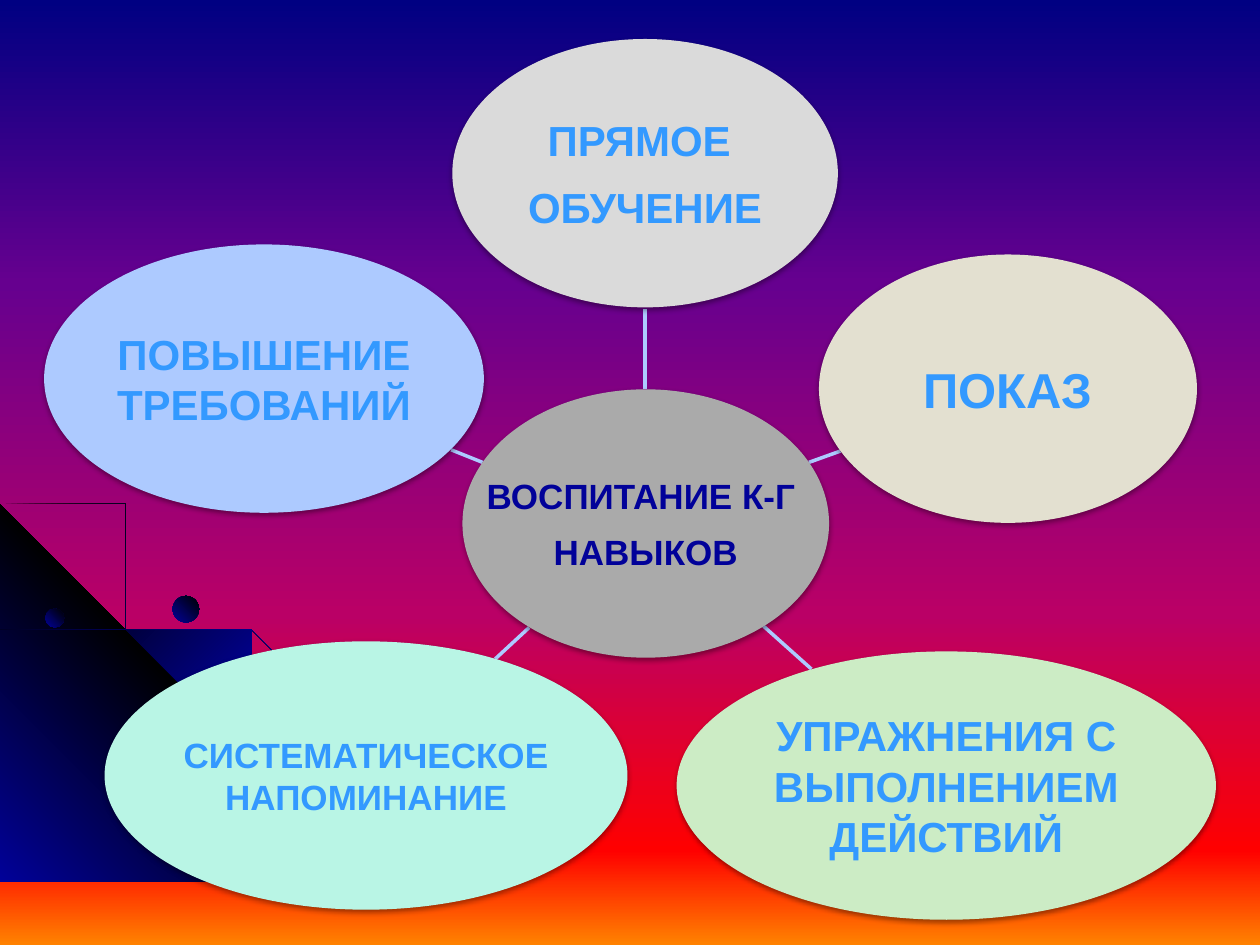
"""Build a radial diagram of teaching methods on a sunset gradient with a swirl ornament."""
from dataclasses import dataclass

from lxml import etree
from pptx import Presentation
from pptx import util as u
from pptx.dml import color
from pptx.enum import shapes, text
from pptx.oxml import ns

COLOURS = {
    "hub": "AAAAAA", "direct": "DADADA", "show": "E3E0D0", "exercise": "CCECC5",
    "remind": "B9F5E5", "demand": "ADCAFF", "spoke": "ADCAFF",
    "label": "3399FF", "title": "010199", "navy": "010199", "black": "000000",
}
SKY = [(0, "000082"), (30, "66008F"), (65, "BA0066"), (90, "FF0000"), (100, "FF8200")]
DARK_EDGES = [(0, COLOURS["black"]), (50, COLOURS["navy"]), (100, COLOURS["black"])]
DARK_MIDDLE = [(0, COLOURS["navy"]), (50, COLOURS["black"]), (100, COLOURS["navy"])]
BEAD = [(0, COLOURS["navy"]), (100, COLOURS["black"])]
BUBBLE_HEIGHT = 2.13


@dataclass
class Bubble:
    """An ellipse with its label."""
    left: float
    top: float
    width: float
    fill: str
    lines: tuple
    size: int
    ink: str = "label"
    wrap: bool = True


@dataclass
class Spoke:
    """A straight line between the hub and a bubble."""
    start: tuple
    end: tuple


@dataclass
class Outline:
    """A closed polygon with a gradient fill."""
    points: list
    stops: list
    angle: int


@dataclass
class Dot:
    """A small round bead on the ornament."""
    left: float
    top: float
    size: float
    angle: int


OUTLINES = [
    Outline([(0.57, 4.47), (0.28, 4.41), (0, 4.35), (0, 4.38), (0.28, 4.43), (0.56, 4.49),
             (0.97, 4.61), (1.35, 4.78), (1.73, 4.99), (2.08, 5.23), (2.41, 5.49), (2.71, 5.79),
             (2.98, 6.12), (3.23, 6.49), (3.37, 6.73), (3.5, 6.98), (3.6, 7.23), (3.7, 7.49),
             (3.72, 7.49), (3.62, 7.23), (3.52, 6.98), (3.39, 6.73), (3.25, 6.48), (3, 6.11),
             (2.72, 5.78), (2.42, 5.48), (2.09, 5.21), (1.74, 4.97), (1.36, 4.77), (0.98, 4.59)],
            DARK_EDGES, 45),
    Outline([(3.22, 7.49), (0, 7.49), (0, 4.27)], DARK_MIDDLE, 315),
    Outline([(2.85, 7.14), (2.94, 7.32), (3.01, 7.49), (3.03, 7.49), (2.96, 7.3), (2.86, 7.12),
             (2.66, 6.76), (2.42, 6.4), (2.15, 6.06), (1.84, 5.76), (1.52, 5.49), (1.17, 5.26),
             (0.79, 5.05), (0.41, 4.88), (0, 4.75), (0, 4.77), (0.39, 4.9), (0.77, 5.07),
             (1.15, 5.28), (1.5, 5.51), (1.83, 5.78), (2.13, 6.08), (2.4, 6.41), (2.65, 6.77)],
            DARK_EDGES, 45),
    Outline([(0, 4.42), (0, 4.44), (0.36, 4.57), (0.74, 4.75), (1.09, 4.94), (1.42, 5.18),
             (1.73, 5.44), (2.02, 5.75), (2.27, 6.05), (2.52, 6.41), (2.67, 6.67), (2.8, 6.94),
             (2.92, 7.22), (3.01, 7.49), (3.03, 7.49), (2.94, 7.2), (2.82, 6.93), (2.69, 6.65),
             (2.54, 6.39), (2.29, 6.03), (2.04, 5.73), (1.75, 5.43), (1.44, 5.16), (1.11, 4.93),
             (0.76, 4.73), (0.39, 4.55)], DARK_EDGES, 45),
]
DOTS = [Dot(0.36, 4.83, 0.15, 315), Dot(2.67, 6.74, 0.16, 45), Dot(1.37, 4.73, 0.21, 315)]
BUBBLES = [
    Bubble(3.67, 3.09, 2.91, "hub", ("ВОСПИТАНИЕ К-Г ", "НАВЫКОВ"), 20, "title", False),
    Bubble(3.59, 0.31, 3.06, "direct", ("ПРЯМОЕ ", "ОБУЧЕНИЕ"), 24),
    Bubble(6.5, 2.02, 3, "show", ("ПОКАЗ",), 28),
    Bubble(5.37, 5.17, 4.28, "exercise", ("УПРАЖНЕНИЯ С ВЫПОЛНЕНИЕМ ДЕЙСТВИЙ",), 24),
    Bubble(0.83, 5.09, 4.15, "remind", ("СИСТЕМАТИЧЕСКОЕ НАПОМИНАНИЕ",), 20),
    Bubble(0.35, 1.94, 3.49, "demand", ("ПОВЫШЕНИЕ ТРЕБОВАНИЙ",), 24),
]
SPOKES = [
    Spoke((5.12, 3.09), (5.12, 2.45)), Spoke((6.42, 3.67), (6.67, 3.58)),
    Spoke((6.06, 4.97), (6.44, 5.31)), Spoke((4.2, 4.98), (3.93, 5.23)),
    Spoke((3.83, 3.67), (3.58, 3.57)),
]


def rgb(name: str) -> color.RGBColor:
    """Look up a named colour."""
    return color.RGBColor.from_string(COLOURS[name])


def apply(target, values: dict) -> None:
    """Set each named attribute on the target."""
    for name, value in values.items():
        setattr(target, name, value)


def add_colour(parent, value: str):
    """Append an sRGB colour element."""
    return etree.SubElement(parent, ns.qn("a:srgbClr"), val=value)


def set_gradient(fill, element, stops: list, angle: int) -> None:
    """Give a fill linear gradient stops and a clockwise angle."""
    fill.gradient()
    gradient = element.find(".//" + ns.qn("a:gradFill"))
    stop_list = gradient.find(ns.qn("a:gsLst"))
    for stop in list(stop_list):
        stop_list.remove(stop)
    for position, value in stops:
        add_colour(etree.SubElement(stop_list, ns.qn("a:gs"), pos=str(position * 1000)), value)
    gradient.find(ns.qn("a:lin")).set("ang", str(angle * 60000))


def finish_ornament(shape, stops: list, angle: int) -> None:
    """Paint an ornament part without line or shadow."""
    set_gradient(shape.fill, shape.element, stops, angle)
    shape.line.fill.background()
    shape.shadow.inherit = False


def draw_outline(page, outline: Outline) -> None:
    """Draw a closed gradient polygon."""
    builder = page.shapes.build_freeform(*outline.points[0], scale=float(u.Inches(1)))
    builder.add_line_segments(outline.points[1:], close=True)
    finish_ornament(builder.convert_to_shape(), outline.stops, outline.angle)


def draw_dot(page, dot: Dot) -> None:
    """Draw a bead."""
    frame = map(u.Inches, (dot.left, dot.top, dot.size, dot.size))
    finish_ornament(page.shapes.add_shape(shapes.MSO_SHAPE.OVAL, *frame), BEAD, dot.angle)


def draw_spoke(page, spoke: Spoke) -> None:
    """Draw a shadowless connecting line."""
    line = page.shapes.add_connector(shapes.MSO_CONNECTOR.STRAIGHT,
                                     *map(u.Inches, spoke.start + spoke.end))
    line.line.color.rgb = rgb("spoke")
    line.line.width = u.Pt(2)
    etree.SubElement(line.element.spPr, ns.qn("a:effectLst"))


def draw_bubble(page, bubble: Bubble) -> None:
    """Draw a labelled ellipse with a soft shadow."""
    frame = map(u.Inches, (bubble.left, bubble.top, bubble.width, BUBBLE_HEIGHT))
    shape = page.shapes.add_shape(shapes.MSO_SHAPE.OVAL, *frame)
    shape.fill.solid()
    shape.fill.fore_color.rgb = rgb(bubble.fill)
    shape.line.fill.background()
    shape.shadow.inherit = False
    effects = shape.element.spPr.find(ns.qn("a:effectLst"))
    shadow = etree.SubElement(effects, ns.qn("a:outerShdw"), blurRad=str(u.Pt(3.1)),
                              dist=str(u.Pt(1.6)), dir="5400000", rotWithShape="0")
    etree.SubElement(add_colour(shadow, COLOURS["black"]), ns.qn("a:alpha"), val="38000")
    box = shape.text_frame
    apply(box, {"word_wrap": bubble.wrap, "vertical_anchor": text.MSO_ANCHOR.MIDDLE})
    apply(box, {f"margin_{side}": u.Inches(0.01) for side in ("left", "right", "top", "bottom")})
    for index, line in enumerate(bubble.lines):
        para = box.add_paragraph() if index else box.paragraphs[0]
        apply(para, {"alignment": text.PP_ALIGN.CENTER, "space_after": u.Pt(bubble.size * 0.4)})
        span = para.add_run()
        span.text = line
        apply(span.font, {"name": "Arial", "size": u.Pt(bubble.size), "bold": True})
        span.font.color.rgb = rgb(bubble.ink)


def main() -> None:
    """Assemble and save the deck."""
    deck = Presentation()
    apply(deck, {"slide_width": u.Inches(10), "slide_height": u.Inches(7.5)})
    page = deck.slides.add_slide(deck.slide_layouts[6])
    set_gradient(page.background.fill, page.element, SKY, 90)
    for draw, items in ((draw_outline, OUTLINES), (draw_dot, DOTS),
                        (draw_spoke, SPOKES), (draw_bubble, BUBBLES)):
        for item in items:
            draw(page, item)
    deck.save("out.pptx")


if __name__ == "__main__":
    main()
